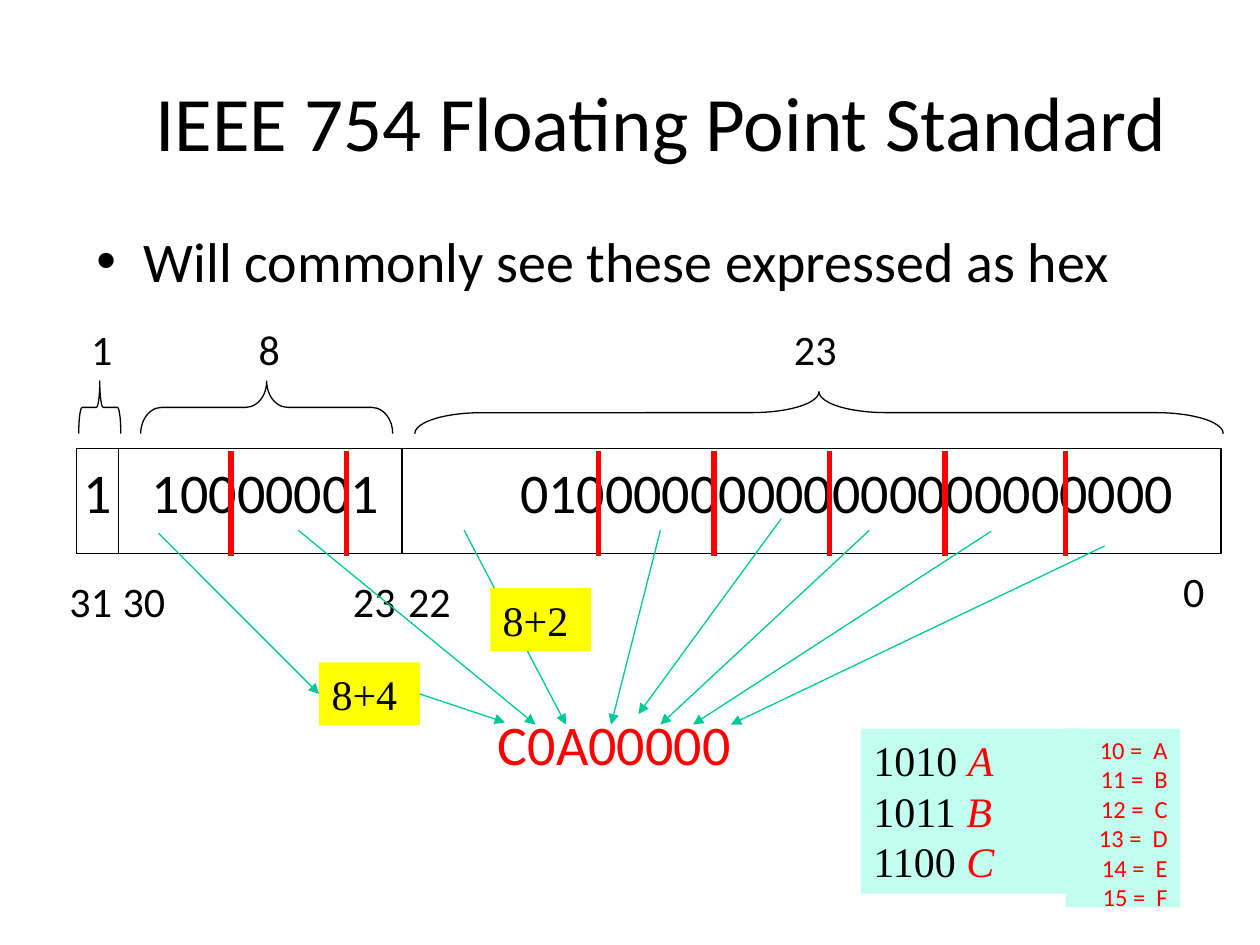
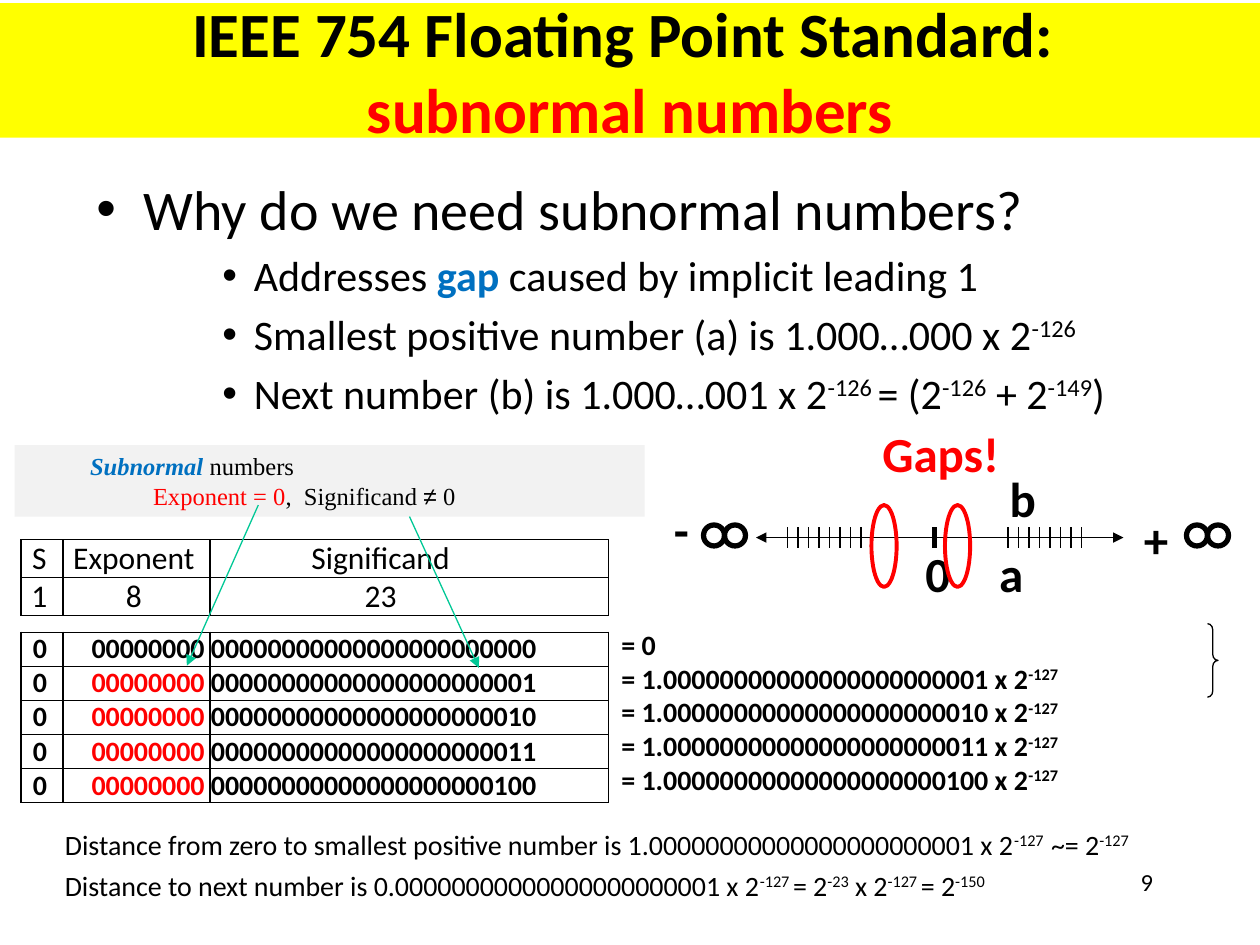
from lxml.etree import SubElement
from pptx import Presentation
from pptx.dml.color import RGBColor
from pptx.enum.shapes import MSO_CONNECTOR, MSO_SHAPE
from pptx.enum.text import MSO_ANCHOR, MSO_AUTO_SIZE, PP_ALIGN
from pptx.oxml.ns import qn
from pptx.util import Emu, Inches, Pt

COLS, ROWS = 120, 90
CELL = Inches(10) // COLS
HEX = {"ink": "000000", "red": "FF0000", "blue": "0070C0", "green": "00C896",
       "mint": "C2FFF0", "yellow": "FFFF00", "grey": "F2F2F2"}
SERIF = "Times New Roman"
RED = {"color": "red"}
RED_SLANT = {"color": "red", "italic": True}


def grid(*cells):
    """Turn grid cells into slide lengths."""
    return [Emu(round(n * CELL)) for n in cells]


def tint(name):
    """Look up a colour by name."""
    return RGBColor.from_string(HEX[name])


def style(run, size, color="ink", font="Calibri", bold=False, italic=False, up=False):
    """Format one run."""
    face = run.font
    face.size, face.name, face.bold, face.italic = Pt(size), font, bold, italic
    face.color.rgb = tint(color)
    if up:
        run._r.get_or_add_rPr().set("baseline", "30000")


def powers(*parts):
    """Make runs that alternate between plain text and superscript."""
    return [(part, {"up": bool(i % 2)}) for i, part in enumerate(parts)]


def write(frame, paras, size, align=PP_ALIGN.LEFT, **base):
    """Fill a text frame; a paragraph is a string or a list of styled runs."""
    for i, para in enumerate(paras):
        line = frame.paragraphs[0] if i == 0 else frame.add_paragraph()
        line.alignment = align
        for text, extra in [(para, {})] if isinstance(para, str) else para:
            run = line.add_run()
            run.text = text
            style(run, size, **{**base, **extra})


def indent(line, left, hang=0):
    """Indent a paragraph, with a bullet when it hangs."""
    props = line._p.get_or_add_pPr()
    left, hang = grid(left, hang)
    props.set("marL", str(left))
    props.set("indent", str(-hang))
    if hang:
        SubElement(props, qn("a:buFont"), typeface="Arial")
        SubElement(props, qn("a:buChar"), char="•")


def add_title(slide, text, box, size, bold=False):
    """Place and format the title; lines after the first are red."""
    title = slide.shapes.title
    title.left, title.top, title.width, title.height = grid(*box)
    frame = title.text_frame
    frame.text = text
    frame.auto_size = MSO_AUTO_SIZE.NONE
    frame.vertical_anchor = MSO_ANCHOR.MIDDLE
    line = frame.paragraphs[0]
    line.alignment = PP_ALIGN.CENTER
    for i, run in enumerate(line.runs):
        style(run, size, "red" if i else "ink", bold=bold)
    for gap in line._p.findall(qn("a:br")):
        SubElement(gap, qn("a:rPr"), sz=str(size * 100))
    return title


def add_text(slide, box, paras, size, wrap=True, **base):
    """Add a text box; one that does not wrap grows with its text."""
    frame = slide.shapes.add_textbox(*grid(*box)).text_frame
    frame.word_wrap = wrap
    if not wrap:
        frame.auto_size = MSO_AUTO_SIZE.SHAPE_TO_FIT_TEXT
    write(frame, paras, size, **base)
    return frame


def add_label(slide, text, mid, top, size, **base):
    """Add a short label centred on a column."""
    wide = 2.4 + len(text) * size * 0.09
    box = (mid - wide / 2, top, wide, 1.2 + size * 0.2)
    add_text(slide, box, [text], size, wrap=False, align=PP_ALIGN.CENTER, **base)


def add_bullets(slide, box, head, points=()):
    """Add a main bullet and its smaller points."""
    frame = add_text(slide, box, [head], 32)
    for point in points:
        line = frame.add_paragraph()
        for text, extra in point:
            run = line.add_run()
            run.text = text
            style(run, 24, **extra)
    for i, line in enumerate(frame.paragraphs):
        line.space_before = Pt(4.8 if i else 6.4)
        indent(line, *((15, 3) if i else (4.5, 4.5)))


def add_form(slide, kind, box, fill=None, line=None, width=0.75):
    """Add a preset shape with a plain fill and outline."""
    form = slide.shapes.add_shape(kind, *grid(*box))
    form.shadow.inherit = False
    if fill:
        form.fill.solid()
        form.fill.fore_color.rgb = tint(fill)
    else:
        form.fill.background()
    if line:
        form.line.color.rgb = tint(line)
        form.line.width = Pt(width)
    else:
        form.line.fill.background()
    return form


def add_note(slide, box, fill, paras, size, **base):
    """Add a filled rectangle with text from its top."""
    note = add_form(slide, MSO_SHAPE.RECTANGLE, box, fill)
    note.text_frame.vertical_anchor = MSO_ANCHOR.TOP
    write(note.text_frame, paras, size, **base)
    return note


def add_brace(slide, kind, box, bend, turn=0):
    """Add a curly brace."""
    brace = add_form(slide, kind, box, line="ink")
    brace.adjustments[0] = bend
    brace.rotation = turn


def add_line(slide, start, end, color="ink", width=0.75, tips=()):
    """Add a straight line, with arrow tips where asked."""
    line = slide.shapes.add_connector(MSO_CONNECTOR.STRAIGHT, *grid(*start, *end))
    line.line.color.rgb = tint(color)
    line.line.width = Pt(width)
    props = line._element.spPr
    for tip in tips:
        SubElement(props.find(qn("a:ln")), qn(f"a:{tip}"), type="triangle")
    SubElement(props, qn("a:effectLst"))
    return line


def add_arrow(slide, start, end):
    """Add a green arrow."""
    return add_line(slide, start, end, "green", tips=["tailEnd"])


def add_bars(slide, spots, top, base, color="ink", width=0.75):
    """Add upright lines of one height."""
    for x in spots:
        add_line(slide, (x, top), (x, base), color, width)


def frame_cell(cell):
    """Give a cell thin black borders and no fill."""
    props = cell._tc.get_or_add_tcPr()
    for side in ("lnL", "lnR", "lnT", "lnB"):
        edge = SubElement(props, qn(f"a:{side}"), w=str(Pt(0.75)))
        SubElement(SubElement(edge, qn("a:solidFill")), qn("a:srgbClr"), val=HEX["ink"])
    cell.fill.background()


def add_fields(slide, top, height, rows, size, aligns, pads, bold=False):
    """Add a table of sign, exponent and significand."""
    widths = (4, 14, 38)
    box = grid(2, top, sum(widths), height * len(rows))
    table = slide.shapes.add_table(len(rows), len(widths), *box).table
    table.first_row = table.horz_banding = False
    for col, wide in zip(table.columns, grid(*widths)):
        col.width = wide
    for row, texts in zip(table.rows, rows):
        row.height = grid(height)[0]
        for cell, text, align, pad in zip(row.cells, texts, aligns, pads):
            frame_cell(cell)
            cell.margin_top = cell.margin_bottom = 0
            cell.margin_left, cell.margin_right = grid(*pad)
            write(cell.text_frame, [text], size, align, bold=bold)


def build_hex(slide):
    """Show how the bits of a float are read as hex digits."""
    add_title(slide, "IEEE 754 Floating Point Standard", (9, 4, 108, 15), 44)
    add_bullets(slide, (8, 21, 102, 54), "Will commonly see these expressed as hex")
    add_form(slide, MSO_SHAPE.RECTANGLE, (7.3, 42.7, 109, 10), line="ink")
    add_bars(slide, (11.3, 38.3), 42.7, 52.7)
    for text, mid in (("31", 8.65), ("30", 13.7), ("23", 35.65), ("22", 40.9)):
        add_label(slide, text, mid, 54.25, 24)
    add_label(slide, "0", 113.7, 53.3, 24)
    for text, mid in (("1", 9.7), ("8", 25.65), ("23", 77.65)):
        add_label(slide, text, mid, 30.25, 24)
    for text, mid in (("1", 9.3), ("10000001", 25.3), ("01000000000000000000000", 80.65)):
        add_label(slide, text, mid, 42.95, 32)
    for box, bend in (((22.9, 26.8, 5, 24), 0.4), ((76, 0.8, 4, 77), 1.6),
                      ((7, 36.8, 5, 4), 0.08)):
        add_brace(slide, MSO_SHAPE.LEFT_BRACE, box, bend, 90)
    add_bars(slide, (22, 33, *range(57, 91, 11), 101.5), 43, 53, "red", 3)
    add_label(slide, "C0A00000", 58.5, 67, 32, color="red")

    digits = [f"{n} =  {letter}" for n, letter in enumerate("ABCDEF", 10)]
    add_note(slide, (101.5, 69.4, 10.9, 17), "mint", digits, 14,
             align=PP_ALIGN.RIGHT, color="red")
    codes = [[(f"{n:b} ", {}), (letter, RED_SLANT)] for n, letter in enumerate("ABC", 10)]
    add_note(slide, (82, 69.4, 21.2, 15.7), "mint", codes, 24, font=SERIF)

    for start, end in (((105.2, 52), (69.6, 69)), ((94.4, 50.6), (66, 69)),
                       ((82.8, 50.5), (62.9, 69)), ((74.4, 49.4), (60.8, 68)),
                       ((62.9, 50.5), (58.2, 69)), ((44.2, 50.5), (53.9, 69)),
                       ((28.4, 50.5), (51, 69))):
        add_arrow(slide, start, end)
    first, _ = [add_note(slide, (x, y, 9.6, 6), "yellow", [text], 24, font=SERIF)
                for x, y, text in ((30.4, 63.1, "8+4"), (46.7, 56, "8+2"))]
    add_arrow(slide, (15.1, 50.8), (30.4, 66.1)).end_connect(first, 1)
    add_arrow(slide, (40, 66.1), (48.1, 68.8)).begin_connect(first, 3)


def draw_axis(slide):
    """Draw the number line with its gaps around zero."""
    add_bars(slide, (*range(75, 83), *range(96, 104)), 50.2, 52.2, width=1)
    add_bars(slide, [89], 50.2, 52.2, width=3)
    add_line(slide, (72, 51.2), (107, 51.2), width=1, tips=["headEnd", "tailEnd"])
    for text, mid, top in (("b", 97.4, 44), ("a", 96.3, 51.2), ("0", 89.3, 51.2),
                           ("+", 110.1, 47.9), ("-", 64.9, 47)):
        add_label(slide, text, mid, top, 28, bold=True)
    for x in (67, 69, 113, 115):
        add_form(slide, MSO_SHAPE.OVAL, (x, 50, 2, 2), line="ink", width=3)
    for x in (83, 90):
        add_form(slide, MSO_SHAPE.OVAL, (x, 48.1, 2.4, 7.8), line="red", width=2.25)
    add_label(slide, "Gaps!", 89.6, 39.7, 28, color="red", bold=True)


def build_gaps(slide):
    """Explain why subnormal numbers are needed."""
    title = add_title(slide, "IEEE 754 Floating Point Standard: \vsubnormal numbers",
                      (0, 0.3, COLS, 12.8), 36, True)
    title.fill.solid()
    title.fill.fore_color.rgb = tint("yellow")
    add_bullets(slide, (8, 16, 112, 54), "Why do we need subnormal numbers?", [
        [("Addresses ", {}), ("gap", {"color": "blue", "bold": True}),
         (" caused by implicit leading 1", {})],
        powers("Smallest positive number (a) is 1.000…000 x 2", "-126"),
        powers("Next number (b) is 1.000…001 x 2", "-126 ", "= (2", "-126",
               " + 2", "-149", ")")])
    draw_axis(slide)

    mid, left, right = PP_ALIGN.CENTER, PP_ALIGN.LEFT, PP_ALIGN.RIGHT
    add_fields(slide, 51.4, 3.6, [("S", "Exponent", "Significand"), ("1", "8", "23")],
               18, (mid, mid, mid), ((0, 0.5), (0, 0.5), (0, 5.5)))
    tails = [f"{n:023b}" for n in range(5)]
    rows = [("0", [("0" * 8, RED if i else {})], tail) for i, tail in enumerate(tails)]
    add_fields(slide, 60.2, 3.25, rows, 16, (mid, right, left),
               ((0, 0.4), (0, 0.5), (0.1, 0)), True)
    values = [powers(f"= 1.{tail} x 2", "-127") for tail in tails[1:]]
    add_text(slide, (58, 59.2, 45, 17.4), ["= 0", *values], 16, wrap=False, bold=True)
    add_brace(slide, MSO_SHAPE.RIGHT_BRACE, (115, 59.4, 1, 7), 0.58)

    add_text(slide, (5, 78.2, 105.5, 4.4), [powers(
        f"Distance from zero to smallest positive number is 1.{tails[1]} x 2",
        "-127  ", "~= 2", "-127")], 16, wrap=False)
    add_text(slide, (5, 82.1, 115, 4.4), [powers(
        f"Distance to next number is 0.{tails[1]} x 2", "-127 ", "= 2", "-23",
        " x 2", "-127 ", "= 2", "-150")], 16)
    add_text(slide, (86, 82, 25, 6), ["9"], 14, align=right)

    note = add_note(slide, (1.4, 42.4, 60, 6.8), "grey", [
        [("Subnormal ", {"color": "blue", "bold": True, "italic": True}), ("numbers", {})],
        [("Exponent = 0", RED), (",  Significand ", {}), ("≠", {"font": "Arial"}),
         (" 0", {})]], 14, font=SERIF)
    for line, inset in zip(note.text_frame.paragraphs, (6, 12)):
        indent(line, inset)
    add_arrow(slide, (24.6, 48.1), (17.8, 63.4))
    add_arrow(slide, (39, 49.2), (45.6, 63.6))


def main():
    """Build and save the slides."""
    deck = Presentation()
    deck.slide_width, deck.slide_height = grid(COLS, ROWS)
    for build in (build_hex, build_gaps):
        build(deck.slides.add_slide(deck.slide_layouts[5]))
    deck.save("out.pptx")


if __name__ == "__main__":
    main()
